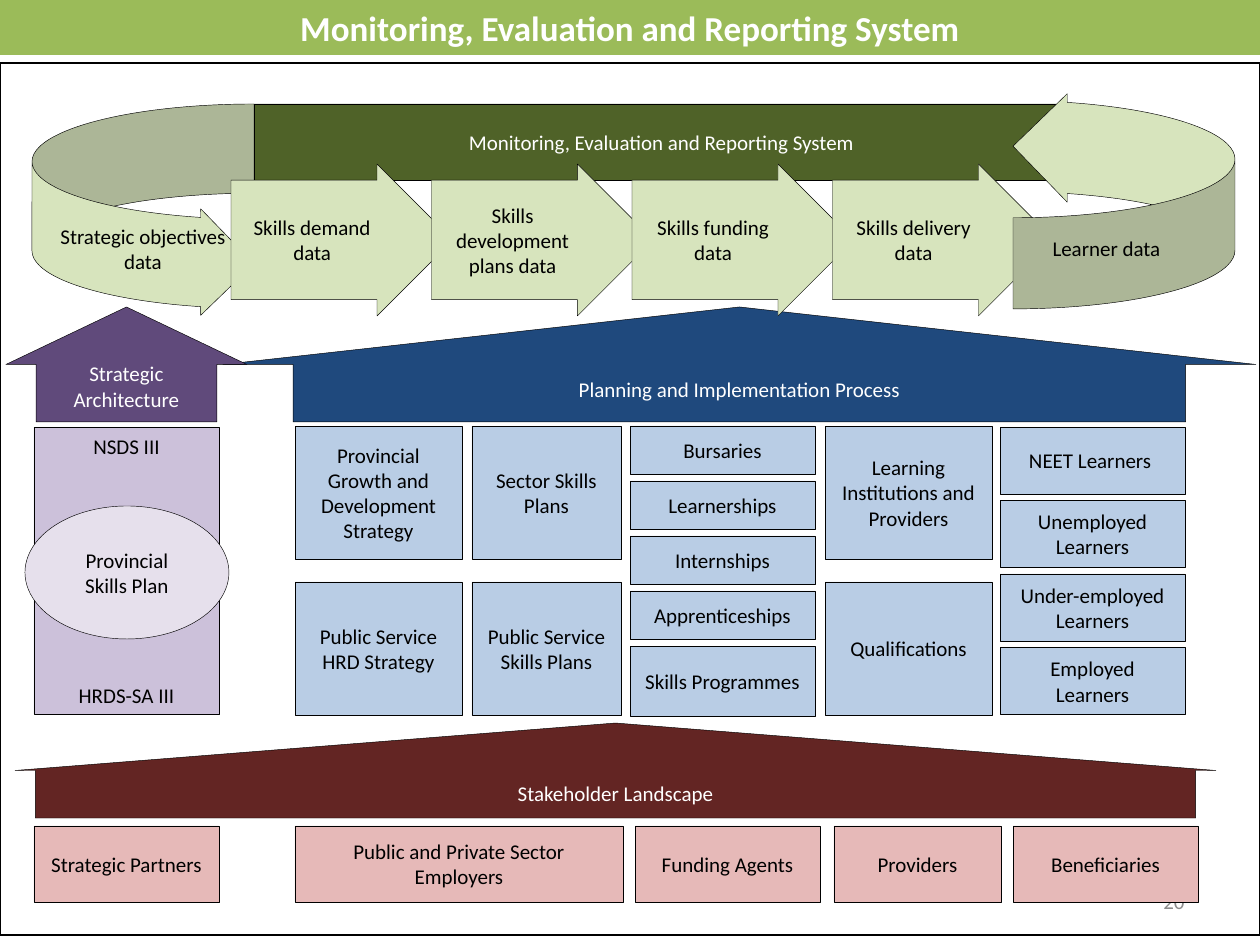
import pptx
import pptx.util
import pptx.dml.color
import pptx.enum.shapes
import pptx.enum.text

RGB = pptx.dml.color.RGBColor
SHAPE = pptx.enum.shapes.MSO_SHAPE
ALIGN = pptx.enum.text.PP_ALIGN
ANCHOR = pptx.enum.text.MSO_ANCHOR

WHITE = RGB(0xFF, 0xFF, 0xFF)
BLACK = RGB(0, 0, 0)
GREY = RGB(0x8C, 0x8C, 0x8C)
LIME = RGB(0x9B, 0xBB, 0x59)
DARK_GREEN = RGB(0x4F, 0x62, 0x28)
PALE_GREEN = RGB(0xD7, 0xE4, 0xBD)
DARK_BLUE = RGB(0x1F, 0x49, 0x7D)
PALE_BLUE = RGB(0xB9, 0xCD, 0xE5)
DARK_PURPLE = RGB(0x60, 0x4A, 0x7B)
LILAC = RGB(0xCC, 0xC1, 0xDA)
PALE_LILAC = RGB(0xE6, 0xE0, 0xEC)
DARK_RED = RGB(0x63, 0x25, 0x23)
PINK = RGB(0xE6, 0xB9, 0xB8)

PX_PER_INCH = 126
SYSTEM_NAME = "Monitoring, Evaluation and Reporting System"


def px(length):
    return round(length * 914400 / PX_PER_INCH)


def write(box, text, color, size=12, bold=False, align=ALIGN.CENTER, **frame_format):
    """Fill the box with one paragraph; frame_format overrides the frame defaults."""
    frame = box.text_frame
    defaults = {"word_wrap": True, "vertical_anchor": ANCHOR.MIDDLE}
    for name, value in {**defaults, **frame_format}.items():
        setattr(frame, name, value)
    para = frame.paragraphs[0]
    para.alignment = align
    span = para.add_run()
    span.text = text
    for name, value in {"name": "Calibri", "size": pptx.util.Pt(size), "bold": bold}.items():
        setattr(span.font, name, value)
    span.font.color.rgb = color


def add_block(page, place, fill, text="", color=BLACK, kind=SHAPE.RECTANGLE,
              adjust=(), line=0.25, **text_format):
    """Add a preset shape; a fill of None or a line of 0 leaves that part out."""
    box = page.shapes.add_shape(kind, *map(px, place))
    box.shadow.inherit = False
    for index, value in enumerate(adjust):
        box.adjustments[index] = value
    if fill is None:
        box.fill.background()
    else:
        box.fill.solid()
        box.fill.fore_color.rgb = fill
    if line:
        box.line.color.rgb = BLACK
        box.line.width = pptx.util.Pt(line)
    else:
        box.line.fill.background()
    if text:
        write(box, text, color, **text_format)
    return box


def add_label(page, place, text, color, **text_format):
    write(page.shapes.add_textbox(*map(px, place)), text, color, **text_format)


def add_page_frame(page):
    add_label(page, (903, 876, 294, 50), "20", GREY, align=ALIGN.RIGHT)
    add_block(page, (0, 0, 1260, 55), LIME, SYSTEM_NAME, WHITE, line=0,
              size=20, bold=True, vertical_anchor=ANCHOR.TOP)
    add_block(page, (0, 63, 1260, 872), None, line=0.75)


def add_section_arrows(page):
    for place, fill, text, shaft in (
        ((223, 307, 1033, 115), DARK_BLUE, "Planning and Implementation Process", 0.864),
        ((6, 307, 241, 115), DARK_PURPLE, "Strategic Architecture", 0.75),
        ((15, 723, 1201, 95), DARK_RED, "Stakeholder Landscape", 0.966),
    ):
        add_block(page, place, fill, text, WHITE, SHAPE.UP_ARROW, (shaft, 0.5))


def add_strategy(page):
    for top, text, anchor in ((427, "NSDS III", ANCHOR.TOP), (581, "HRDS-SA III", ANCHOR.BOTTOM)):
        add_block(page, (34, top, 185, 133), LILAC, text, vertical_anchor=anchor)
    add_block(page, (25, 506, 204, 133), PALE_LILAC, "Provincial Skills Plan", kind=SHAPE.OVAL)


def add_planning(page):
    for left, width, texts in (
        (295, 167, ("Provincial Growth and Development Strategy", "Public Service HRD Strategy")),
        (472, 149, ("Sector Skills Plans", "Public Service Skills Plans")),
        (825, 167, ("Learning Institutions and Providers", "Qualifications")),
    ):
        for top, text in zip((426, 582), texts):
            add_block(page, (left, top, width, 133), PALE_BLUE, text)

    programmes = ("Bursaries", "Learnerships", "Internships", "Apprenticeships",
                  "Skills Programmes")
    for row, text in enumerate(programmes):
        height = 70 if text == programmes[-1] else 48
        add_block(page, (630, 426 + 55 * row, 185, height), PALE_BLUE, text)

    learners = ("NEET Learners ", "Unemployed Learners", "Under-employed Learners",
                "Employed Learners")
    for row, text in enumerate(learners):
        add_block(page, (1000, 427 + 73.5 * row, 185, 67), PALE_BLUE, text)


def add_stakeholders(page):
    for left, width, text in (
        (34, 185, "Strategic Partners"),
        (295, 328, "Public and Private Sector Employers"),
        (635, 185, "Funding Agents"),
        (834, 167, "Providers"),
        (1013, 185, "Beneficiaries"),
    ):
        add_block(page, (left, 826, width, 76), PINK, text)


def add_data_cycle(page):
    add_block(page, (254, 104, 815, 76), DARK_GREEN, SYSTEM_NAME, WHITE)
    add_block(page, (32, 104, 222, 213), PALE_GREEN, "Strategic objectives data",
              kind=SHAPE.CURVED_RIGHT_ARROW, adjust=(0.419, 0.5, 0.25), margin_top=px(83))
    steps = ("Skills demand data", "Skills development plans data",
             "Skills funding data", "Skills delivery data")
    for column, text in enumerate(steps):
        add_block(page, (231 + 200.5 * column, 164, 222, 152), PALE_GREEN, text,
                  kind=SHAPE.RIGHT_ARROW, adjust=(0.786, 0.5))
    return_arrow = add_block(page, (1013, 92, 222, 217), PALE_GREEN,
                             kind=SHAPE.CURVED_LEFT_ARROW, adjust=(0.42, 0.5, 0.25))
    return_arrow.element.spPr.xfrm.set("flipV", "1")
    add_label(page, (1034, 229, 145, 62), "Learner data", BLACK,
              word_wrap=False, vertical_anchor=ANCHOR.TOP)


def main():
    deck = pptx.Presentation()
    deck.slide_width, deck.slide_height = px(1260), px(945)
    page = deck.slides.add_slide(deck.slide_layouts[6])
    for add_part in (add_page_frame, add_section_arrows, add_strategy, add_planning,
                     add_stakeholders, add_data_cycle):
        add_part(page)
    deck.save("out.pptx")


if __name__ == "__main__":
    main()
